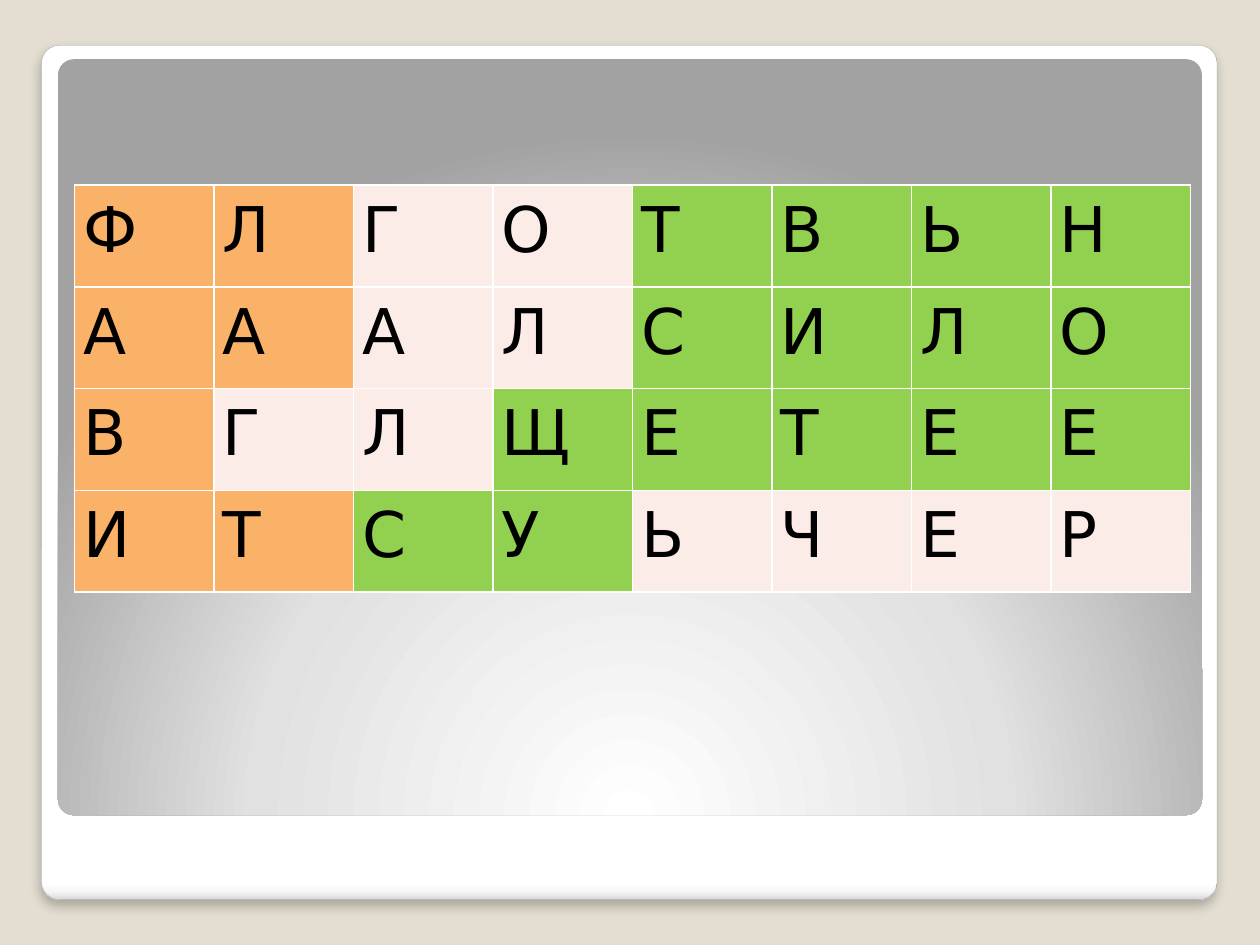
from pptx import Presentation, util as u
from pptx.dml.color import RGBColor
from pptx.enum import shapes
from pptx.oxml import parse_xml
from pptx.oxml.ns import nsdecls, qn

ROWS = ["ФЛГОТВЬН", "АААЛСИЛО", "ВГЛЩЕТЕЕ", "ИТСУЬЧЕР"]
TINTS = ["OOPPGGGG", "OOPPGGGG", "OPPGGGGG", "OOGGPPPP"]
FILLS = {"O": "F9B268", "P": "FCECE7", "G": "92D050"}
LINEAR = '<a:lin ang="5400000" scaled="0"/>'
RADIAL = ('<a:path path="circle"><a:fillToRect l="50000" t="175000" '
          'r="50000" b="-75000"/></a:path>')


def paint(fill, hue):
    fill.solid()
    fill.fore_color.rgb = RGBColor.from_string(hue)


def node(tag, body, attrs=""):
    return parse_xml(f'<a:{tag} {nsdecls("a")} {attrs}>{body}</a:{tag}>')


class Deck:
    font = "DejaVu Sans"
    size = u.Pt(36)
    ink = "000000"
    rule = "FFFFFF"
    inset = u.Inches(0.07)

    def __init__(self, back):
        self.show = Presentation()
        self.show.slide_width = u.Inches(10)
        self.show.slide_height = u.Inches(7.5)
        self.slide = self.show.slides.add_slide(self.show.slide_layouts[6])
        paint(self.slide.background.fill, back)

    def panel(self, box, stops, course, edge=None, shade=None):
        shape = self.slide.shapes.add_shape(
            shapes.MSO_SHAPE.ROUNDED_RECTANGLE, *map(u.Inches, box))
        shape.adjustments[0] = 0.021
        shape.shadow.inherit = False
        shape.fill.gradient()
        props = shape.element.spPr
        marks = "".join(
            f'<a:gs pos="{pos * 1000}"><a:srgbClr val="{hue}"/></a:gs>'
            for pos, hue in stops)
        props.replace(props.find(qn("a:gradFill")),
                      node("gradFill", f"<a:gsLst>{marks}</a:gsLst>{course}"))
        if edge:
            paint(shape.line.fill, edge)
            shape.line.width = u.Pt(0.16)
        else:
            shape.line.fill.background()
        if shade:
            hue, alpha, blur, dist = shade
            props.find(qn("a:effectLst")).append(node(
                "outerShdw",
                f'<a:srgbClr val="{hue}"><a:alpha val="{alpha * 1000}"/></a:srgbClr>',
                f'blurRad="{u.Pt(blur)}" dist="{u.Pt(dist)}" dir="5400000" '
                'algn="t" rotWithShape="0"'))

    def grid(self, box, rows, tints):
        table = self.slide.shapes.add_table(
            len(rows), len(rows[0]), *map(u.Inches, box)).table
        table.first_row = table.horz_banding = False
        for r, (row, tint) in enumerate(zip(rows, tints)):
            for c, (mark, key) in enumerate(zip(row, tint)):
                self.cell(table.cell(r, c), mark, FILLS[key])

    def cell(self, cell, mark, hue):
        cell.text = mark
        cell.margin_left = cell.margin_right = self.inset
        cell.margin_top = cell.margin_bottom = self.inset
        font = cell.text_frame.paragraphs[0].font
        font.name, font.size = self.font, self.size
        paint(font.fill, self.ink)
        props = cell._tc.get_or_add_tcPr()
        for side in "LRTB":
            props.append(node(
                f"ln{side}",
                f'<a:solidFill><a:srgbClr val="{self.rule}"/></a:solidFill>',
                f'w="{u.Pt(1)}"'))
        paint(cell.fill, hue)


def main():
    deck = Deck("E3DED1")
    deck.panel((0.33, 0.36, 9.33, 6.78),
               [(0, "FFFFFF"), (98, "FFFFFF"), (99, "F7F7F7"), (100, "DADADA")],
               LINEAR, edge="A4A4A4", shade=("000000", 25, 6, 4))
    deck.panel((0.46, 0.47, 9.08, 6),
               [(0, "FFFFFF"), (55, "E1E1E1"), (100, "A2A2A2")], RADIAL)
    deck.grid((0.59, 1.47, 8.86, 3.23), ROWS, TINTS)
    deck.show.save("out.pptx")


if __name__ == "__main__":
    main()
